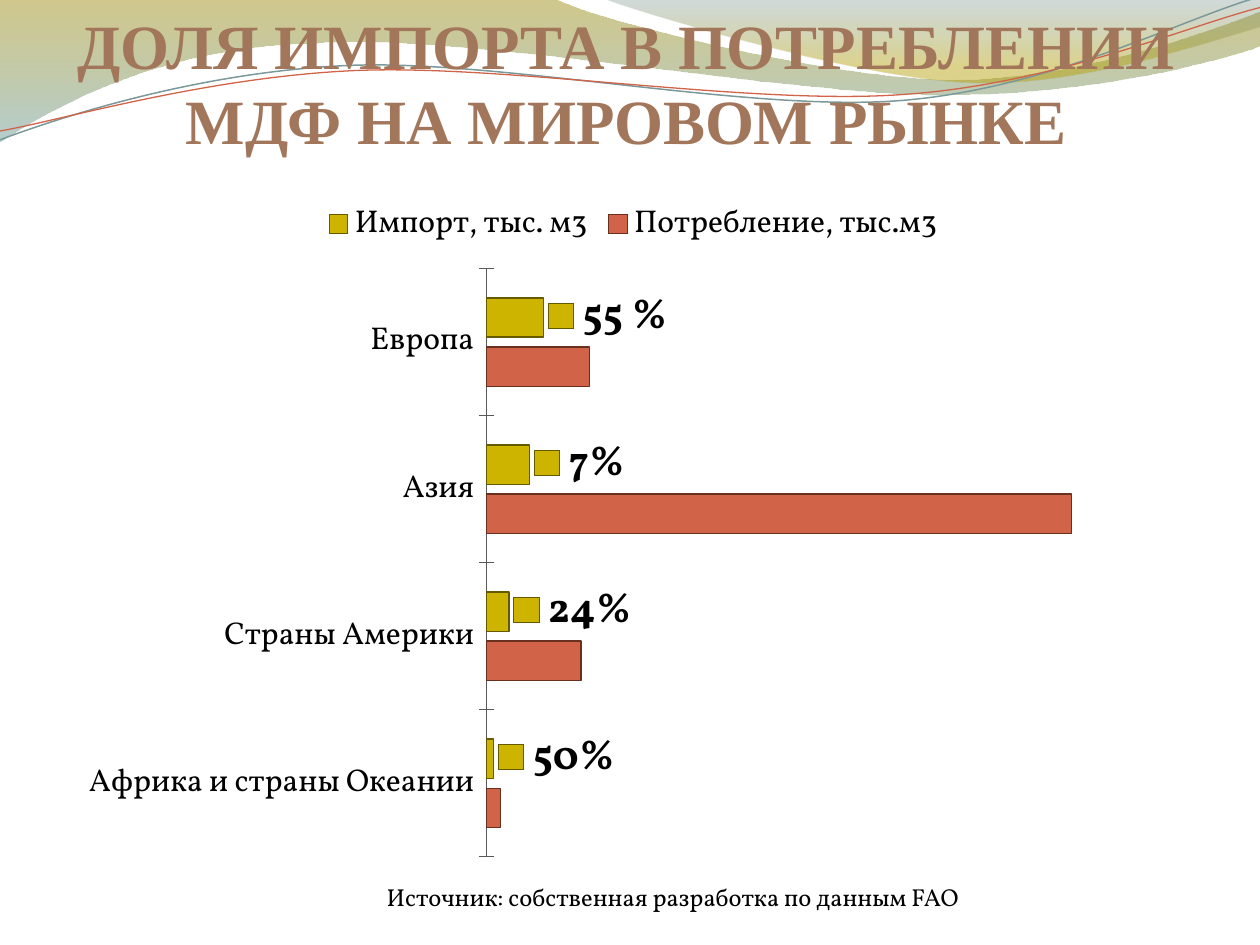
from pptx import Presentation
from pptx.chart.data import CategoryChartData
from pptx.dml.color import RGBColor
from pptx.enum.chart import (XL_CHART_TYPE, XL_LABEL_POSITION, XL_LEGEND_POSITION,
                             XL_TICK_MARK)
from pptx.enum.text import MSO_ANCHOR, MSO_AUTO_SIZE, PP_ALIGN
from pptx.oxml import parse_xml
from pptx.oxml.ns import nsdecls, qn
from pptx.util import Inches, Pt

BAR = XL_CHART_TYPE.BAR_CLUSTERED
LEGEND_TOP = XL_LEGEND_POSITION.TOP
OUTSIDE_END = XL_LABEL_POSITION.OUTSIDE_END
TICK_CROSS = XL_TICK_MARK.CROSS
BOTTOM = MSO_ANCHOR.BOTTOM
NO_AUTOFIT = MSO_AUTO_SIZE.NONE
GROW = MSO_AUTO_SIZE.SHAPE_TO_FIT_TEXT
CENTER = PP_ALIGN.CENTER

TITLE_ONLY = 5
UNITS = 1000
BODY_FONT = "Vollkorn"
PLOT_AREA = {"x": 0.37, "y": 0.12, "w": 0.61, "h": 0.86}
CATEGORIES = ["Африка и страны Океании", "Страны Америки", "Азия", "Европа"]
SHARES = ["50%", "24%", "7%", "55 %"]
SERIES = [
    ("Потребление, тыс.м3", [1600, 11000, 68000, 12000], "D16349", "68311F"),
    ("Импорт, тыс. м3", [800, 2600, 5000, 6600], "CCB400", "665A00"),
]
BANDS = [
    ([(0, 0), (4.4, -0.01),
      (4.76, 0.17, 6.64, 0.63, 7.58, 0.63), (8.53, 0.63, 9.58, 0.26, 10, 0.09),
      (10.01, 0.36), (9.83, 0.44, 8.7, 0.76, 7.46, 0.75),
      (6.22, 0.75, 3.82, 0.28, 2.57, 0.34), (1.29, 0.36, 0.46, 0.83, -0.01, 1.13)],
     [(0, "978500", 45), (1, "77A5A6", 55)]),
    ([(4.79, -0.01), (5.09, 0.11, 6.82, 0.62, 7.69, 0.65),
      (8.56, 0.69, 9.61, 0.32, 10, 0.21), (10, 0)],
     [(0, "648484", 30), (0.8, "B49F00", 45)]),
]
WAVES = [
    ([(0, 1.11), (0.48, 0.93, 1.58, 0.57, 2.77, 0.52),
      (3.95, 0.47, 5.93, 0.89, 7.13, 0.8), (8.33, 0.71, 9.38, 0.15, 9.98, -0.02)],
     "7C999A", 0.85),
    ([(0, 1.04), (0.47, 0.96, 1.64, 0.61, 2.83, 0.56),
      (4.03, 0.51, 5.97, 0.84, 7.17, 0.75), (8.36, 0.67, 9.41, 0.21, 10, 0.06)],
     "D16349", 0.75),
]


def color(value):
    """Turn a hex string into a colour."""
    return RGBColor.from_string(value)


def set_values(target, values):
    """Set each named format value on an object."""
    for name, value in values.items():
        setattr(target, name, value)


def format_font(font, name, size, hex_color, bold=False):
    """Give a font its name, size, colour and weight."""
    set_values(font, {"name": name, "size": Pt(size), "bold": bold})
    font.fill.solid()
    font.fill.fore_color.rgb = color(hex_color)


def format_line(line, hex_color, width):
    """Give a line its colour and width."""
    line.color.rgb = color(hex_color)
    line.width = Pt(width)


def bend(shape, segments, left, top):
    """Turn the straight steps of a freeform into cubic curves where given."""
    steps = list(shape.element.iter(qn("a:lnTo")))
    for step, segment in zip(steps, segments[1:]):
        if len(segment) == 2:
            continue
        points = "".join(
            f'<a:pt x="{round((x - left) * UNITS)}" y="{round((y - top) * UNITS)}"/>'
            for x, y in zip(segment[::2], segment[1::2]))
        curve = parse_xml(f'<a:cubicBezTo {nsdecls("a")}>{points}</a:cubicBezTo>')
        step.getparent().replace(step, curve)


def add_outline(slide, segments, close):
    """Add a freeform that follows the segments."""
    ends = [segment[-2:] for segment in segments]
    vertices = [(x * UNITS, y * UNITS) for x, y in ends]
    builder = slide.shapes.build_freeform(*vertices[0], scale=Inches(1) / UNITS)
    builder.add_line_segments(vertices[1:], close=close)
    shape = builder.convert_to_shape()
    shape.shadow.inherit = False
    bend(shape, segments, min(x for x, _ in ends), min(y for _, y in ends))
    return shape


def add_band(slide, segments, stops):
    """Add a translucent band with a vertical gradient."""
    shape = add_outline(slide, segments, True)
    shape.line.fill.background()
    shape.fill.gradient()
    shape.fill.gradient_angle = 270
    for stop, (position, hex_color, _) in zip(shape.fill.gradient_stops, stops):
        stop.position = position
        stop.color.rgb = color(hex_color)
    for element, (_, _, opacity) in zip(shape.element.iter(qn("a:srgbClr")), stops):
        element.append(parse_xml(f'<a:alpha {nsdecls("a")} val="{opacity * 1000}"/>'))


def add_wave(slide, segments, hex_color, width):
    """Add a thin open wave."""
    shape = add_outline(slide, segments, False)
    shape.fill.background()
    format_line(shape.line, hex_color, width)


def fill_title(title, text):
    """Place and format the title in front of the waves."""
    set_values(title, {"left": Inches(0.47), "top": 0,
                       "width": Inches(9), "height": Inches(1.25)})
    frame = title.text_frame
    frame.text = text
    set_values(frame, {"auto_size": NO_AUTOFIT, "word_wrap": True,
                       "vertical_anchor": BOTTOM, "margin_left": 0,
                       "margin_right": 0, "margin_top": Inches(0.05), "margin_bottom": 0})
    paragraph = frame.paragraphs[0]
    paragraph.alignment = CENTER
    format_font(paragraph.runs[0].font, "Times New Roman", 36, "A2765A", True)
    title.element.getparent().append(title.element)


def add_source(slide, text):
    """Add the source line under the chart."""
    box = slide.shapes.add_textbox(Inches(2.97), Inches(6.95), Inches(4.78), Inches(0.34))
    frame = box.text_frame
    frame.text = text
    set_values(frame, {"word_wrap": False, "auto_size": GROW})
    format_font(frame.paragraphs[0].runs[0].font, BODY_FONT, 14, "000000")


def set_plot_area(chart):
    """Fix the inner plot area as shares of the chart."""
    plot_area = chart.element.find(".//" + qn("c:plotArea"))
    for layout in plot_area.findall(qn("c:layout")):
        plot_area.remove(layout)
    modes = '<c:xMode val="edge"/><c:yMode val="edge"/>'
    sizes = "".join(f'<c:{key} val="{share}"/>' for key, share in PLOT_AREA.items())
    plot_area.insert(0, parse_xml(
        f'<c:layout {nsdecls("c")}><c:manualLayout><c:layoutTarget val="inner"/>'
        f'{modes}{sizes}</c:manualLayout></c:layout>'))


def label_shares(series):
    """Label each bar with its share and its legend key."""
    labels = series.data_labels
    format_font(labels.font, BODY_FONT, 24, "000000", True)
    set_values(labels, {"position": OUTSIDE_END, "show_legend_key": True,
                        "show_value": True})
    for index, share in enumerate(SHARES):
        label = series.points[index].data_label
        label.text_frame.text = share
        label.position = OUTSIDE_END
        run = label.text_frame.paragraphs[0].runs[0]
        format_font(run.font, BODY_FONT, 24, "000000", True)
    for element in labels._element.iter(qn("c:dLbl")):
        element.find(qn("c:showLegendKey")).set("val", "1")


def add_share_chart(slide):
    """Add the bar chart of imports and consumption."""
    data = CategoryChartData()
    data.categories = CATEGORIES
    for name, values, _, _ in SERIES:
        data.add_series(name, values)
    chart = slide.shapes.add_chart(
        BAR, Inches(0.55), Inches(1.48), Inches(8.95), Inches(5.43), data).chart
    format_font(chart.font, BODY_FONT, 18, "000000")
    set_values(chart, {"has_title": False, "has_legend": True})
    set_values(chart.legend, {"position": LEGEND_TOP, "include_in_layout": True})
    set_values(chart.plots[0], {"gap_width": 150, "overlap": -25,
                                "vary_by_categories": False})
    set_values(chart.value_axis, {"visible": False, "has_major_gridlines": False,
                                  "minimum_scale": 0, "maximum_scale": 80000})
    chart.category_axis.major_tick_mark = TICK_CROSS
    format_line(chart.category_axis.format.line, "595959", 0.75)
    for series, (_, _, fill, edge) in zip(chart.plots[0].series, SERIES):
        series.format.fill.solid()
        series.format.fill.fore_color.rgb = color(fill)
        format_line(series.format.line, edge, 0.75)
    label_shares(chart.plots[0].series[1])
    set_plot_area(chart)


def main():
    """Build and save the slide."""
    presentation = Presentation()
    set_values(presentation, {"slide_width": Inches(10), "slide_height": Inches(7.5)})
    slide = presentation.slides.add_slide(presentation.slide_layouts[TITLE_ONLY])
    for band in BANDS:
        add_band(slide, *band)
    for wave in WAVES:
        add_wave(slide, *wave)
    fill_title(slide.shapes.title, "ДОЛЯ ИМПОРТА В ПОТРЕБЛЕНИИ МДФ НА МИРОВОМ РЫНКЕ")
    add_source(slide, "Источник: собственная разработка по данным FAO")
    add_share_chart(slide)
    presentation.save("out.pptx")


if __name__ == "__main__":
    main()
